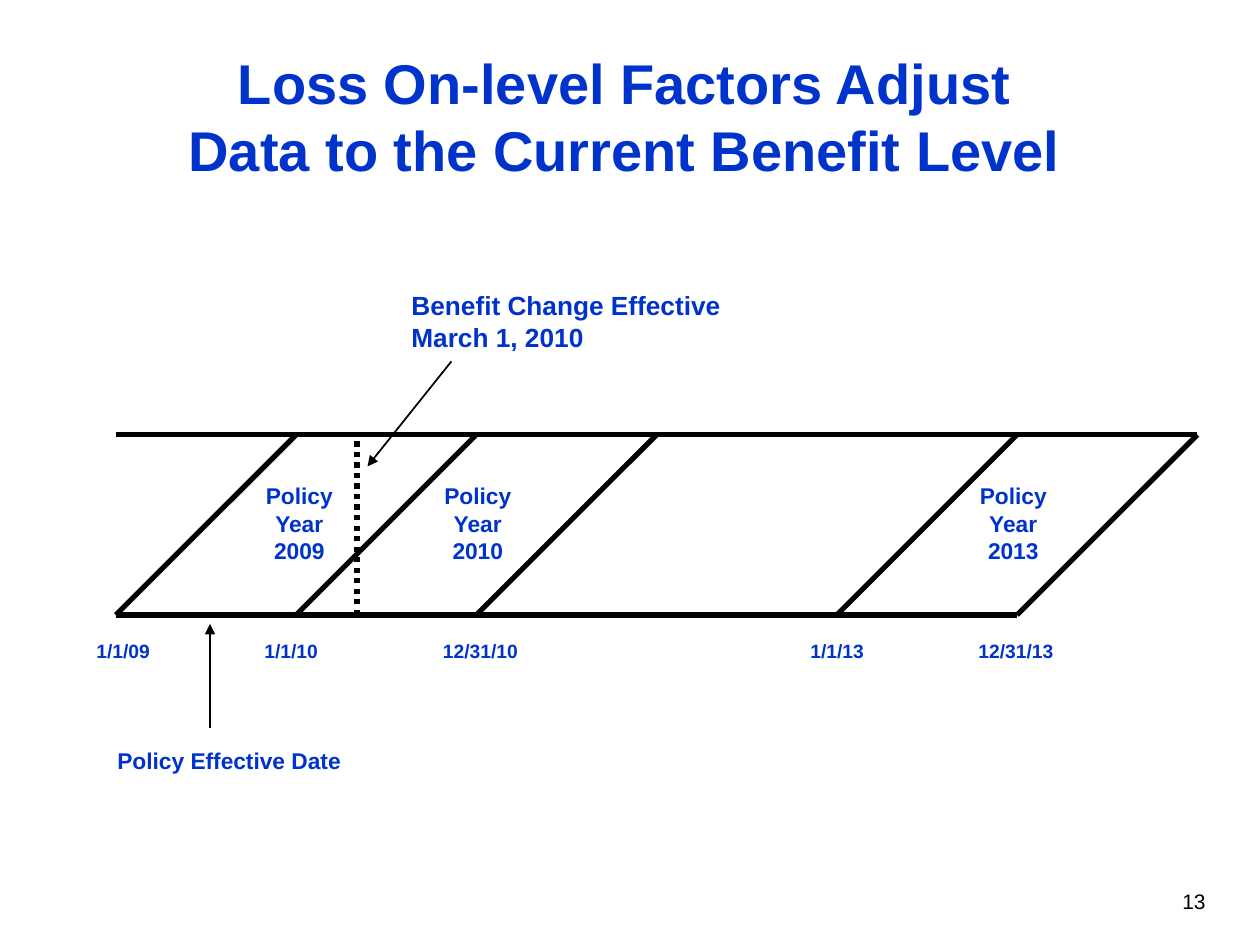
"""Build the slide on loss on-level factors and policy years."""
from lxml import etree
from pptx import Presentation
from pptx import util as u
from pptx.dml import color
from pptx.enum import dml, shapes, text
from pptx.oxml import ns

BLUE, BLACK = "0033CC", "000000"
LEFT, TOP, BOTTOM = 66.2, 248.4, 351.4
YEAR = BOTTOM - TOP


def rgb(value):
    """Return the colour of a hex string."""
    return color.RGBColor.from_string(value)


def add_text(slide, content, box, size, align=text.PP_ALIGN.LEFT, ink=BLUE,
             bold=True, anchor=text.MSO_ANCHOR.TOP):
    """Add a wrapped text box in one font style."""
    shape = slide.shapes.add_textbox(*(u.Pt(value) for value in box))
    frame = shape.text_frame
    frame.word_wrap = True
    frame.vertical_anchor = anchor
    frame.text = content
    for paragraph in frame.paragraphs:
        paragraph.alignment = align
        for run in paragraph.runs:
            run.font.name = "Arial"
            run.font.size = u.Pt(size)
            run.font.bold = bold
            run.font.color.rgb = rgb(ink)


def add_line(slide, start, end, width=3, dash=None, arrow=False):
    """Add a black line, dashed or with an arrowhead at its end if wanted."""
    connector = slide.shapes.add_connector(
        shapes.MSO_CONNECTOR.STRAIGHT, *(u.Pt(value) for value in start + end))
    connector.line.color.rgb = rgb(BLACK)
    connector.line.width = u.Pt(width)
    if dash:
        connector.line.dash_style = dash
    if arrow:
        outline = connector.line._get_or_add_ln()
        etree.SubElement(outline, ns.qn("a:tailEnd"), type="triangle")
    etree.SubElement(connector._element.spPr, ns.qn("a:effectLst"))


def add_policy_years(slide):
    """Draw the slanted policy years between the two time lines."""
    for index in (0, 1, 2, 4, 5):
        x = LEFT + index * YEAR
        add_line(slide, (x, BOTTOM), (x + YEAR, TOP))
    add_line(slide, (LEFT, TOP), (LEFT + 6 * YEAR, TOP))
    add_line(slide, (LEFT, BOTTOM), (LEFT + 5 * YEAR, BOTTOM))
    for year, x in ((2009, 132), (2010, 234), (2013, 540)):
        add_text(slide, f"Policy Year\n{year}", (x, 272, 78, 54), 13,
                 text.PP_ALIGN.CENTER)


def add_dates(slide):
    """Label the dates below the lower time line."""
    for date, x in (("1/1/09", 48), ("1/1/10", 144), ("12/31/10", 246),
                    ("1/1/13", 456), ("12/31/13", 552)):
        add_text(slide, date, (x, 362, 81, 20), 11)


def add_notes_on_dates(slide):
    """Point out the benefit change and the policy effective date."""
    add_text(slide, "Policy Effective Date", (60, 423, 144, 23), 13)
    add_line(slide, (120, 416), (120, 356.5), 1, arrow=True)
    add_text(slide, "Benefit Change Effective March 1, 2010",
             (228, 162, 198, 43), 15)
    add_line(slide, (204, BOTTOM), (204, TOP), dash=dml.MSO_LINE.ROUND_DOT)
    add_line(slide, (258, 206.5), (210, 266.5), 1, arrow=True)


def main():
    """Build and save the presentation."""
    presentation = Presentation()
    presentation.slide_width, presentation.slide_height = u.Pt(720), u.Pt(540)
    slide = presentation.slides.add_slide(presentation.slide_layouts[6])
    add_text(slide, "Loss On-level Factors Adjust\vData to the Current Benefit Level",
             (0, 12, 714, 108), 32, text.PP_ALIGN.CENTER,
             anchor=text.MSO_ANCHOR.MIDDLE)
    add_policy_years(slide)
    add_dates(slide)
    add_notes_on_dates(slide)
    add_text(slide, "13", (546, 504, 150, 36), 12, text.PP_ALIGN.RIGHT, BLACK, False)
    presentation.save("out.pptx")


if __name__ == "__main__":
    main()
